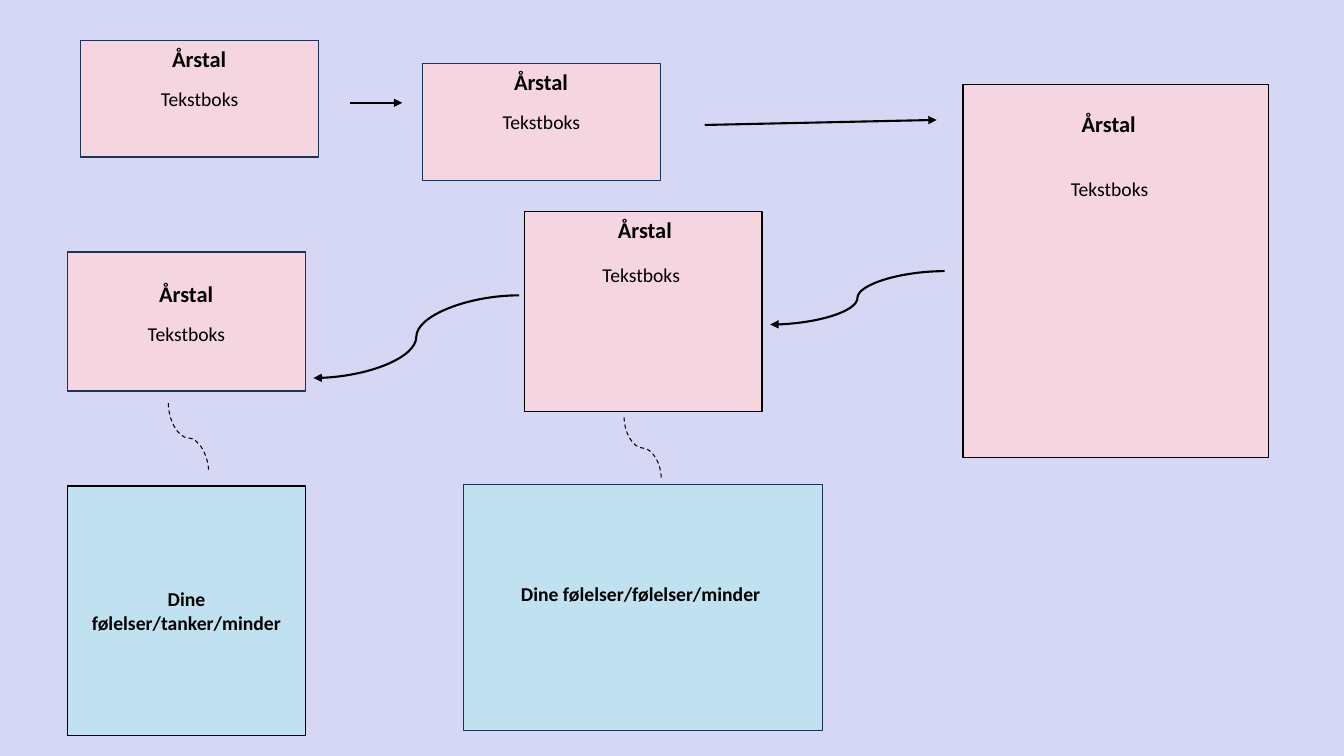
from dataclasses import dataclass

import lxml.etree
import pptx
import pptx.dml.color
import pptx.enum.dml
import pptx.enum.shapes
import pptx.enum.text
import pptx.oxml.ns
import pptx.util

Inches = pptx.util.Inches
Pt = pptx.util.Pt
ALIGN = pptx.enum.text.PP_ALIGN
CONNECTOR = pptx.enum.shapes.MSO_CONNECTOR
COLORS = {
    "background": "D5D7F4",
    "event": "F5D6E0",
    "feelings": "C0E1F0",
    "navy": "1E3256",
    "black": "000000",
}
FONT = "Calibri"
YEAR = "Årstal"
BODY = "Tekstboks"


@dataclass
class Box:
    left: float
    top: float
    width: float
    height: float
    fill: str
    border: str
    text: str = ""
    bold: bool = False
    top_margin: float = 0.05


@dataclass
class Label:
    text: str
    left: float
    top: float
    width: float
    height: float = 0.34
    size: int = 14
    bold: bool = False
    align: ALIGN = ALIGN.CENTER


@dataclass
class Link:
    x1: float
    y1: float
    x2: float
    y2: float
    kind: CONNECTOR = CONNECTOR.CURVE
    dashed: bool = False


def year_label(left: float, top: float, width: float) -> Label:
    return Label(YEAR, left, top, width, 0.37, 16, True, ALIGN.LEFT)


BOXES = [
    Box(0.8, 0.4, 2.36, 1.16, "event", "navy", BODY),
    Box(4.19, 0.63, 2.36, 1.16, "event", "navy", BODY),
    Box(9.55, 0.84, 3.03, 3.7, "event", "black"),
    Box(5.2, 2.1, 2.36, 1.98, "event", "black"),
    Box(0.67, 2.5, 2.36, 1.38, "event", "navy", BODY, top_margin=0.29),
    Box(4.6, 4.81, 3.56, 2.44, "feelings", "navy"),
    Box(0.67, 4.82, 2.36, 2.48, "feelings", "black", "Dine følelser/tanker/minder", True),
]
LABELS = [
    year_label(1.61, 0.4, 0.9),
    year_label(5, 0.63, 0.87),
    year_label(10.63, 1.04, 0.88),
    year_label(6.03, 2.1, 0.96),
    year_label(1.48, 2.73, 0.78),
    Label(BODY, 9.55, 1.71, 2.91),
    Label(BODY, 5.25, 2.56, 2.22),
    Label("Dine følelser/følelser/minder", 4.89, 5.72, 2.93, bold=True),
]
LINKS = [
    Link(3.47, 1.02, 3.99, 1.02, CONNECTOR.STRAIGHT),
    Link(6.99, 1.24, 9.29, 1.19, CONNECTOR.STRAIGHT),
    Link(9.37, 2.69, 7.64, 3.22),
    Link(5.15, 2.93, 3.11, 3.75),
    Link(1.67, 4, 2.07, 4.69, dashed=True),
    Link(6.19, 4.14, 6.56, 4.75, dashed=True),
]


def color(key: str) -> pptx.dml.color.RGBColor:
    return pptx.dml.color.RGBColor.from_string(COLORS[key])


def write(frame, text: str, size: int, bold: bool, align: ALIGN) -> None:
    frame.word_wrap = True
    frame.text = text
    paragraph = frame.paragraphs[0]
    paragraph.alignment = align
    for run in paragraph.runs:
        run.font.name = FONT
        run.font.size = Pt(size)
        run.font.bold = bold
        run.font.color.rgb = color("black")


def draw_box(slide, box: Box) -> None:
    panel = slide.shapes.add_shape(
        pptx.enum.shapes.MSO_SHAPE.RECTANGLE,
        Inches(box.left), Inches(box.top), Inches(box.width), Inches(box.height),
    )
    panel.shadow.inherit = False
    panel.fill.solid()
    panel.fill.fore_color.rgb = color(box.fill)
    panel.line.color.rgb = color(box.border)
    panel.line.width = Pt(1)
    if box.text:
        panel.text_frame.vertical_anchor = pptx.enum.text.MSO_ANCHOR.MIDDLE
        panel.text_frame.margin_top = Inches(box.top_margin)
        write(panel.text_frame, box.text, 14, box.bold, ALIGN.CENTER)


def draw_label(slide, label: Label) -> None:
    caption = slide.shapes.add_textbox(
        Inches(label.left), Inches(label.top), Inches(label.width), Inches(label.height)
    )
    write(caption.text_frame, label.text, label.size, label.bold, label.align)


def draw_link(slide, link: Link) -> None:
    x1, y1, x2, y2 = link.x1, link.y1, link.x2, link.y2
    if link.dashed:
        center_x, center_y = (x1 + x2) / 2, (y1 + y2) / 2
        half_run, half_rise = (y2 - y1) / 2, (x2 - x1) / 2
        x1, x2 = center_x + half_run, center_x - half_run
        y1, y2 = center_y - half_rise, center_y + half_rise
    connector = slide.shapes.add_connector(
        link.kind, Inches(x1), Inches(y1), Inches(x2), Inches(y2)
    )
    connector.line.color.rgb = color("black")
    properties = connector.element.spPr
    qn = pptx.oxml.ns.qn
    if link.dashed:
        connector.line.width = Pt(0.75)
        connector.line.dash_style = pptx.enum.dml.MSO_LINE.DASH
        properties.find(qn("a:xfrm")).set("rot", str(270 * 60000))
    else:
        connector.line.width = Pt(1.5)
        lxml.etree.SubElement(properties.find(qn("a:ln")), qn("a:tailEnd"), type="triangle")
    lxml.etree.SubElement(properties, qn("a:effectLst"))


def main() -> None:
    presentation = pptx.Presentation()
    presentation.slide_width = Inches(13.33)
    presentation.slide_height = Inches(7.5)
    slide = presentation.slides.add_slide(presentation.slide_layouts[6])
    slide.background.fill.solid()
    slide.background.fill.fore_color.rgb = color("background")
    for box in BOXES:
        draw_box(slide, box)
    for label in LABELS:
        draw_label(slide, label)
    for link in LINKS:
        draw_link(slide, link)
    presentation.save("out.pptx")


if __name__ == "__main__":
    main()
